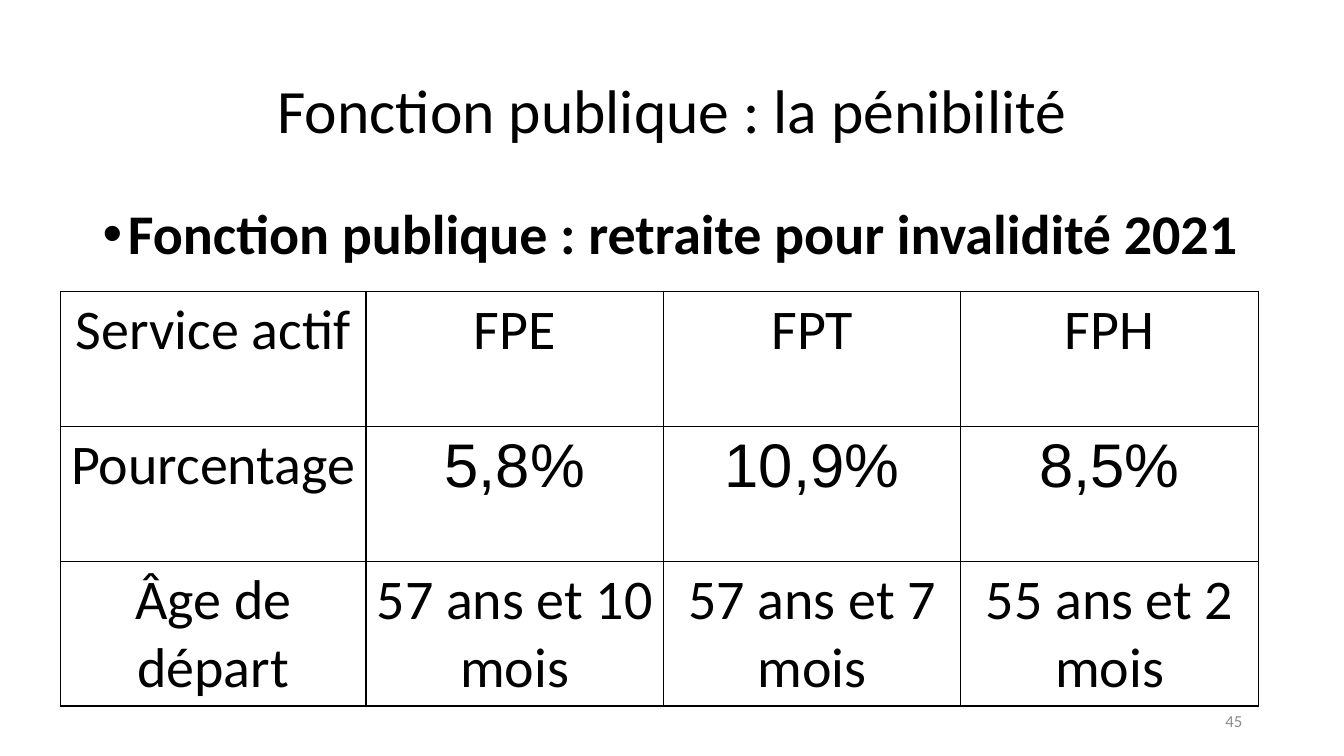
"""Build the slide on disability retirement in the French public service."""
from lxml import etree
from pptx import Presentation
from pptx import util as u
from pptx.dml.color import RGBColor
from pptx.enum import text
from pptx.oxml import ns

BLACK, GREY, WHITE = "000000", "8C8C8C", "FFFFFF"
ROWS = [
    ["Service actif", "FPE", "FPT", "FPH"],
    ["Pourcentage", "5,8%", "10,9%", "8,5%"],
    ["Âge de départ", "57 ans et 10 mois", "57 ans et 7 mois", "55 ans et 2 mois"],
]


def colour(value):
    """Turn a hex string into a colour."""
    return RGBColor.from_string(value)


def write(frame, words, size=40, font="Calibri", ink=BLACK, bold=False,
          align=text.PP_ALIGN.CENTER, anchor=text.MSO_ANCHOR.TOP, spacing=None):
    """Write one formatted paragraph in a text frame and return it."""
    frame.word_wrap = True
    frame.vertical_anchor = anchor
    para = frame.paragraphs[0]
    para.alignment = align
    para.line_spacing = spacing
    span = para.add_run()
    span.text = words
    span.font.size = u.Pt(size)
    span.font.name = font
    span.font.bold = bold
    span.font.color.rgb = colour(ink)
    return para


def add_box(page, box, words, **style):
    """Place a text box and return its paragraph."""
    area = page.shapes.add_textbox(*map(u.Inches, box))
    return write(area.text_frame, words, **style)


def add_bullet(page, box, words):
    """Place a bold bulleted statement with a hanging indent."""
    para = add_box(page, box, words, bold=True, align=text.PP_ALIGN.LEFT, spacing=0.9)
    para.space_before = u.Pt(10)
    properties = para._p.get_or_add_pPr()
    indent = u.Inches(0.25)
    properties.set("marL", str(indent))
    properties.set("indent", str(-indent))
    etree.SubElement(properties, ns.qn("a:buFont")).set("typeface", "Arial")
    etree.SubElement(properties, ns.qn("a:buChar")).set("char", "•")


def add_borders(cell):
    """Draw a thin black line on each side of a cell."""
    properties = cell._tc.get_or_add_tcPr()
    for side in ("lnL", "lnR", "lnT", "lnB"):
        line = etree.SubElement(properties, ns.qn(f"a:{side}"), w=str(u.Pt(1)))
        fill = etree.SubElement(line, ns.qn("a:solidFill"))
        etree.SubElement(fill, ns.qn("a:srgbClr")).set("val", BLACK)


def add_figures(page, box, rows, first_width=3.03, row_height=1.34):
    """Place the table, sharing the width left by its first column."""
    frame = page.shapes.add_table(len(rows), len(rows[0]), *map(u.Inches, box))
    table = frame.table
    table.first_row = table.horz_banding = False
    other_width = (box[2] - first_width) / (len(rows[0]) - 1)
    for index, column in enumerate(table.columns):
        column.width = u.Inches(other_width if index else first_width)
    for row, values in zip(table.rows, rows):
        row.height = u.Inches(row_height)
        for cell, value in zip(row.cells, values):
            add_borders(cell)
            cell.fill.solid()
            cell.fill.fore_color.rgb = colour(WHITE)
            style = {"size": 44, "font": "Arial"} if value.endswith("%") else {}
            write(cell.text_frame, value, **style)


def build_slide(deck):
    """Lay out the title, statement, table and page number."""
    page = deck.slides.add_slide(deck.slide_layouts[6])
    add_box(page, (0.92, 0.4, 11.5, 1.45), "Fonction publique : la pénibilité",
            size=44, anchor=text.MSO_ANCHOR.MIDDLE, spacing=0.9)
    add_bullet(page, (0.92, 2, 11.5, 0.8),
               "Fonction publique : retraite pour invalidité 2021")
    add_figures(page, (0.6, 2.89, 11.88, 4.02), ROWS)
    add_box(page, (9.42, 6.95, 3, 0.4), "45", size=12, ink=GREY,
            align=text.PP_ALIGN.RIGHT, anchor=text.MSO_ANCHOR.MIDDLE)


def main():
    """Create and save the deck."""
    deck = Presentation()
    deck.slide_width, deck.slide_height = u.Inches(13.33), u.Inches(7.5)
    build_slide(deck)
    deck.save("out.pptx")


if __name__ == "__main__":
    main()
